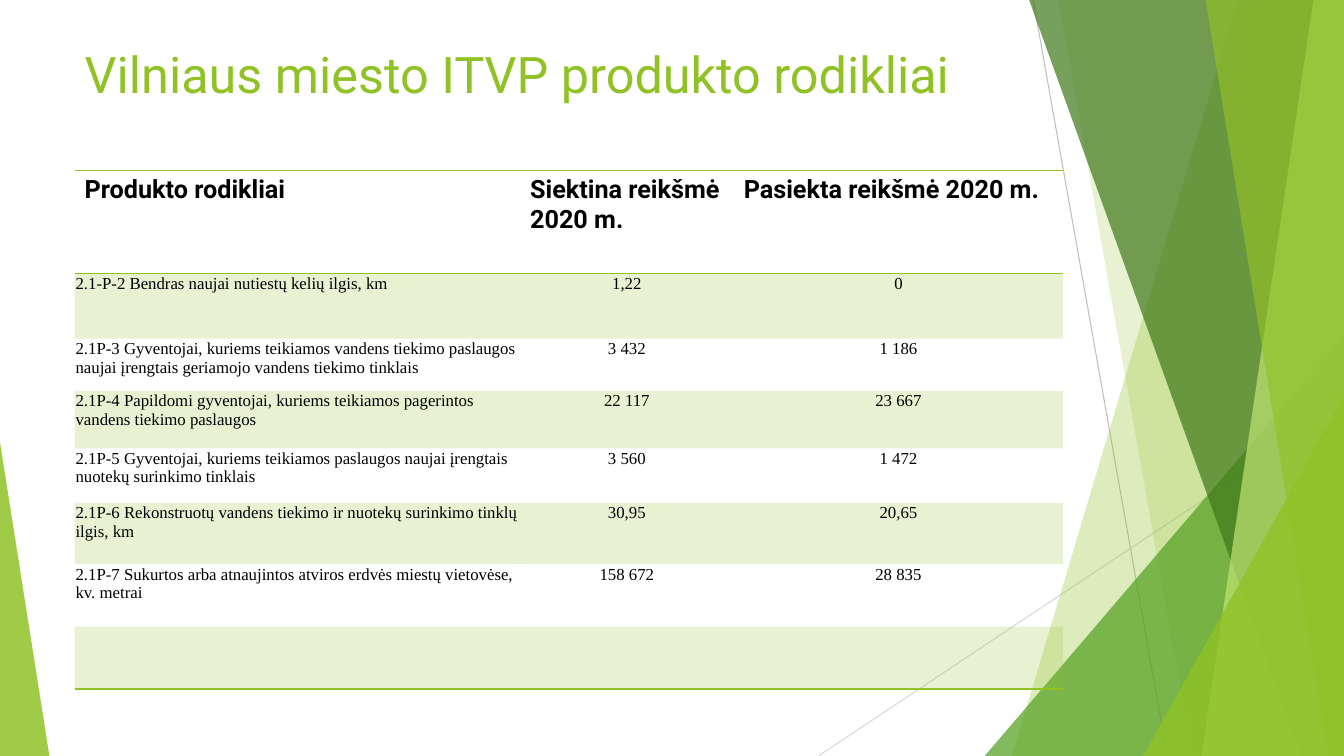
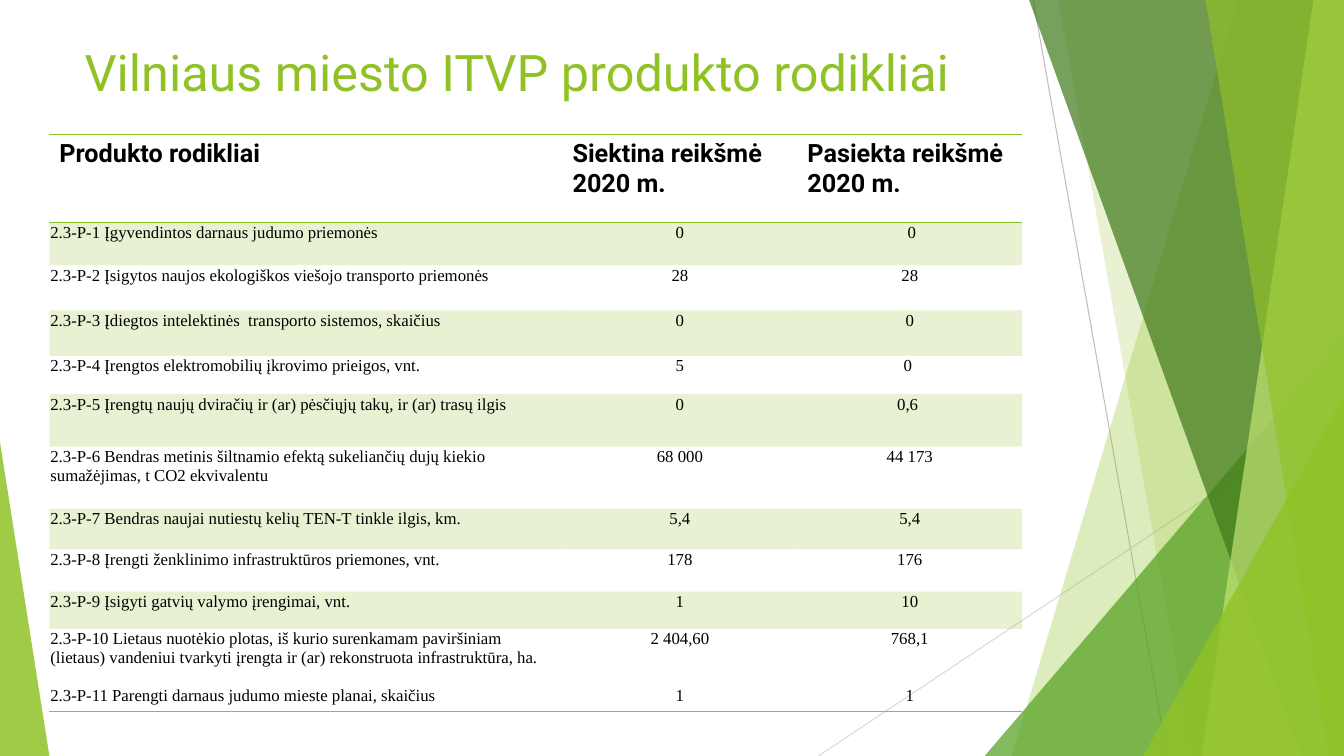
"""Build two slides of product indicators for the Vilnius programme."""
from dataclasses import dataclass

from lxml import etree
from pptx import Presentation
from pptx.dml.color import RGBColor
from pptx.enum.shapes import MSO_CONNECTOR, MSO_SHAPE
from pptx.enum.text import MSO_ANCHOR, MSO_AUTO_SIZE, PP_ALIGN
from pptx.oxml.ns import qn
from pptx.util import Pt

STRAIGHT = MSO_CONNECTOR.STRAIGHT
TRIANGLE = MSO_SHAPE.ISOSCELES_TRIANGLE
LEFT, CENTER = PP_ALIGN.LEFT, PP_ALIGN.CENTER
TOP = MSO_ANCHOR.TOP
NO_AUTOFIT = MSO_AUTO_SIZE.NONE
PLAIN_TABLE = "{2D5ABB26-0587-4C30-8999-92F81FD0307C}"
WIDTH, HEIGHT = 960, 540


@dataclass(frozen=True)
class Theme:
    lime: str = "90C226"
    green: str = "54A021"
    forest: str = "3F7819"
    pale: str = "C0E474"
    ink: str = "000000"
    gray: str = "BFBFBF"
    light_gray: str = "D9D9D9"
    heading_font: str = "Roboto"
    body_font: str = "Times New Roman"
    title_size: float = 36
    header_size: float = 18
    body_size: float = 12
    body_line: float = 13.8
    band_opacity: int = 20
    rule_width: float = 1


THEME = Theme()
TITLE_FONT = {"name": THEME.heading_font, "size": Pt(THEME.title_size), "bold": False}
HEADER_FONT = {"name": THEME.heading_font, "size": Pt(THEME.header_size), "bold": True}
BODY_FONT = {"name": THEME.body_font, "size": Pt(THEME.body_size), "bold": False}
TITLE_FRAME = {"word_wrap": True, "auto_size": NO_AUTOFIT, "vertical_anchor": TOP}
BODY_MARGINS = {
    "margin_left": Pt(0.7), "margin_top": Pt(0.7), "margin_right": Pt(0.7), "margin_bottom": 0,
}
PLAIN_FLAGS = {"first_row": False, "horz_banding": False}

TITLE = "Vilniaus miesto ITVP produkto rodikliai"
HEADER = ("Produkto rodikliai", "Siektina reikšmė 2020 m.", "Pasiekta reikšmė 2020 m.")

HAIRLINES = [
    (738, 0, 833.8, HEIGHT, THEME.gray),
    (WIDTH, 290.2, 584.6, HEIGHT, THEME.light_gray),
]
FACETS = [
    ("panel", 884.2, 722.9, THEME.lime, 30),
    ("panel", 756, 851.8, THEME.lime, 20),
    ("corner", 703.4, 239.8, THEME.green, 72),
    ("panel", 735.1, 929.5, THEME.forest, 70),
    ("panel", 938.2, 858.2, THEME.pale, 70),
    ("panel", 861.1, 949, THEME.lime, 65),
    ("corner", 816.5, 283, THEME.lime, 80),
    ("wedge", 35.3, 316, THEME.lime, 85),
]

INDICATOR_SLIDES = [
    {
        "title_box": (53.3, 27.4, 676.8, 84.2),
        "origin": (53.3, 121.7),
        "columns": (318.2, 152.6, 235.4),
        "heights": (73.4, 46.8, 37.4, 41, 38.9, 43.9, 44.6, 44.6),
        "indicators": [
            ("2.1-P-2 Bendras naujai nutiestų kelių ilgis, km", "1,22", "0"),
            ("2.1P-3 Gyventojai, kuriems teikiamos vandens tiekimo paslaugos naujai "
             "įrengtais geriamojo vandens tiekimo tinklais", "3 432", "1 186"),
            ("2.1P-4 Papildomi gyventojai, kuriems teikiamos pagerintos vandens "
             "tiekimo paslaugos", "22 117", "23 667"),
            ("2.1P-5 Gyventojai, kuriems teikiamos paslaugos naujai įrengtais  "
             "nuotekų surinkimo tinklais", "3 560", "1 472"),
            ("2.1P-6 Rekonstruotų vandens tiekimo ir nuotekų surinkimo tinklų ilgis, km",
             "30,95", "20,65"),
            ("2.1P-7 Sukurtos arba atnaujintos atviros erdvės miestų vietovėse, kv. metrai",
             "158 672", "28 835"),
            ("", "", ""),
        ],
    },
    {
        "title_box": (53.3, 25.9, 676.8, 69.8),
        "origin": (35.3, 95.8),
        "columns": (366.5, 167.8, 160.6),
        "heights": (63.4, 30.2, 32.4, 32.4, 27.4, 37.4, 44.6, 28.8, 30.2, 26.6, 59),
        "indicators": [
            ("2.3-P-1 Įgyvendintos darnaus judumo priemonės", "0", " 0"),
            ("2.3-P-2 Įsigytos naujos ekologiškos viešojo transporto priemonės", "28", "28"),
            ("2.3-P-3 Įdiegtos intelektinės  transporto sistemos, skaičius", "0", "0"),
            ("2.3-P-4 Įrengtos elektromobilių įkrovimo prieigos, vnt.", "5", "0 "),
            ("2.3-P-5 Įrengtų naujų dviračių ir (ar) pėsčiųjų takų, ir (ar) trasų ilgis",
             "0", "0,6 "),
            ("2.3-P-6 Bendras metinis šiltnamio efektą sukeliančių dujų kiekio "
             "sumažėjimas, t CO2 ekvivalentu", "68 000", "44 173"),
            ("2.3-P-7 Bendras naujai nutiestų kelių TEN-T tinkle ilgis, km.", "5,4", "5,4"),
            ("2.3-P-8 Įrengti ženklinimo infrastruktūros priemones, vnt.", "178", "176"),
            ("2.3-P-9 Įsigyti gatvių valymo įrengimai, vnt.", "1", "10"),
            ("2.3-P-10 Lietaus nuotėkio plotas, iš kurio surenkamam paviršiniam (lietaus) "
             "vandeniui tvarkyti įrengta ir (ar) rekonstruota infrastruktūra, ha.\n"
             "2.3-P-11 Parengti darnaus judumo mieste planai, skaičius",
             "2 404,60\n1", "768,1\n1"),
        ],
    },
]


def apply_format(target, values, color=None):
    for attribute, value in values.items():
        setattr(target, attribute, value)
    if color:
        target.color.rgb = RGBColor.from_string(color)


def tint(fill, properties, color, opacity):
    fill.solid()
    fill.fore_color.rgb = RGBColor.from_string(color)
    swatch = next(properties.iter(qn("a:srgbClr")))
    etree.SubElement(swatch, qn("a:alpha")).set("val", str(opacity * 1000))


prs = Presentation()
prs.slide_width, prs.slide_height = Pt(WIDTH), Pt(HEIGHT)
layout = prs.slide_layouts[5]
for footer in list(layout.placeholders)[1:]:
    footer.element.getparent().remove(footer.element)
slides = [prs.slides.add_slide(layout) for _ in INDICATOR_SLIDES]

backdrop = slides[0].shapes
for x1, y1, x2, y2, color in HAIRLINES:
    hairline = backdrop.add_connector(STRAIGHT, Pt(x1), Pt(y1), Pt(x2), Pt(y2))
    apply_format(hairline.line, {"width": Pt(0.75)}, color)
    etree.SubElement(hairline.element.spPr, qn("a:effectLst"))

for kind, x, y, color, opacity in FACETS:
    if kind == "panel":
        outline = backdrop.build_freeform(Pt(x), 0)
        outline.add_line_segments(
            [(Pt(WIDTH), 0), (Pt(WIDTH), Pt(HEIGHT)), (Pt(y), Pt(HEIGHT))], close=True)
        facet = outline.convert_to_shape()
    else:
        left, width, apex = (x, WIDTH - x, 1) if kind == "corner" else (0, x, 0)
        facet = backdrop.add_shape(TRIANGLE, Pt(left), Pt(y), Pt(width), Pt(HEIGHT - y))
        facet.adjustments[0] = apex
    tint(facet.fill, facet.element.spPr, color, opacity)
    facet.line.fill.background()
    facet.shadow.inherit = False

for part in list(backdrop)[1:]:
    layout.shapes.element.append(part.element)

for slide, content in zip(slides, INDICATOR_SLIDES):
    title = slide.shapes.title
    title_box = map(Pt, content["title_box"])
    apply_format(title, dict(zip(("left", "top", "width", "height"), title_box)))
    title.text_frame.text = TITLE
    apply_format(title.text_frame, TITLE_FRAME)
    heading = title.text_frame.paragraphs[0]
    heading.alignment = LEFT
    apply_format(heading.runs[0].font, TITLE_FONT, THEME.lime)

    rows = [HEADER, *content["indicators"]]
    columns, heights = content["columns"], content["heights"]
    frame = slide.shapes.add_table(
        len(rows), len(columns), *map(Pt, content["origin"]),
        Pt(sum(columns)), Pt(sum(heights)))
    table = frame.table
    apply_format(table, PLAIN_FLAGS)
    next(frame.element.iter(qn("a:tableStyleId"))).text = PLAIN_TABLE
    for column, width in zip(table.columns, columns):
        column.width = Pt(width)
    for row, height in zip(table.rows, heights):
        row.height = Pt(height)

    for position, (cell, tc) in enumerate(zip(table.iter_cells(), frame.element.iter(qn("a:tc")))):
        row_number, column_number = divmod(position, len(columns))
        is_header = row_number == 0
        cell.text = rows[row_number][column_number]
        if not is_header:
            apply_format(cell, BODY_MARGINS)
        for order, paragraph in enumerate(cell.text_frame.paragraphs):
            paragraph.alignment = LEFT if is_header or column_number == 0 else CENTER
            if order:
                paragraph.space_before = Pt(THEME.body_line * (2 if column_number else 1))
            for run in paragraph.runs:
                apply_format(run.font, HEADER_FONT if is_header else BODY_FONT, THEME.ink)

        properties = tc.get_or_add_tcPr()
        if row_number % 2:
            tint(cell.fill, properties, THEME.lime, THEME.band_opacity)
        else:
            cell.fill.background()
        edges = ["a:lnT"] if is_header else []
        if row_number in (0, len(rows) - 1):
            edges.append("a:lnB")
        for order, edge in enumerate(edges):
            rule = etree.Element(qn(edge), w=str(Pt(THEME.rule_width)))
            solid = etree.SubElement(rule, qn("a:solidFill"))
            etree.SubElement(solid, qn("a:srgbClr"), val=THEME.lime)
            properties.insert(order, rule)

prs.save("out.pptx")
